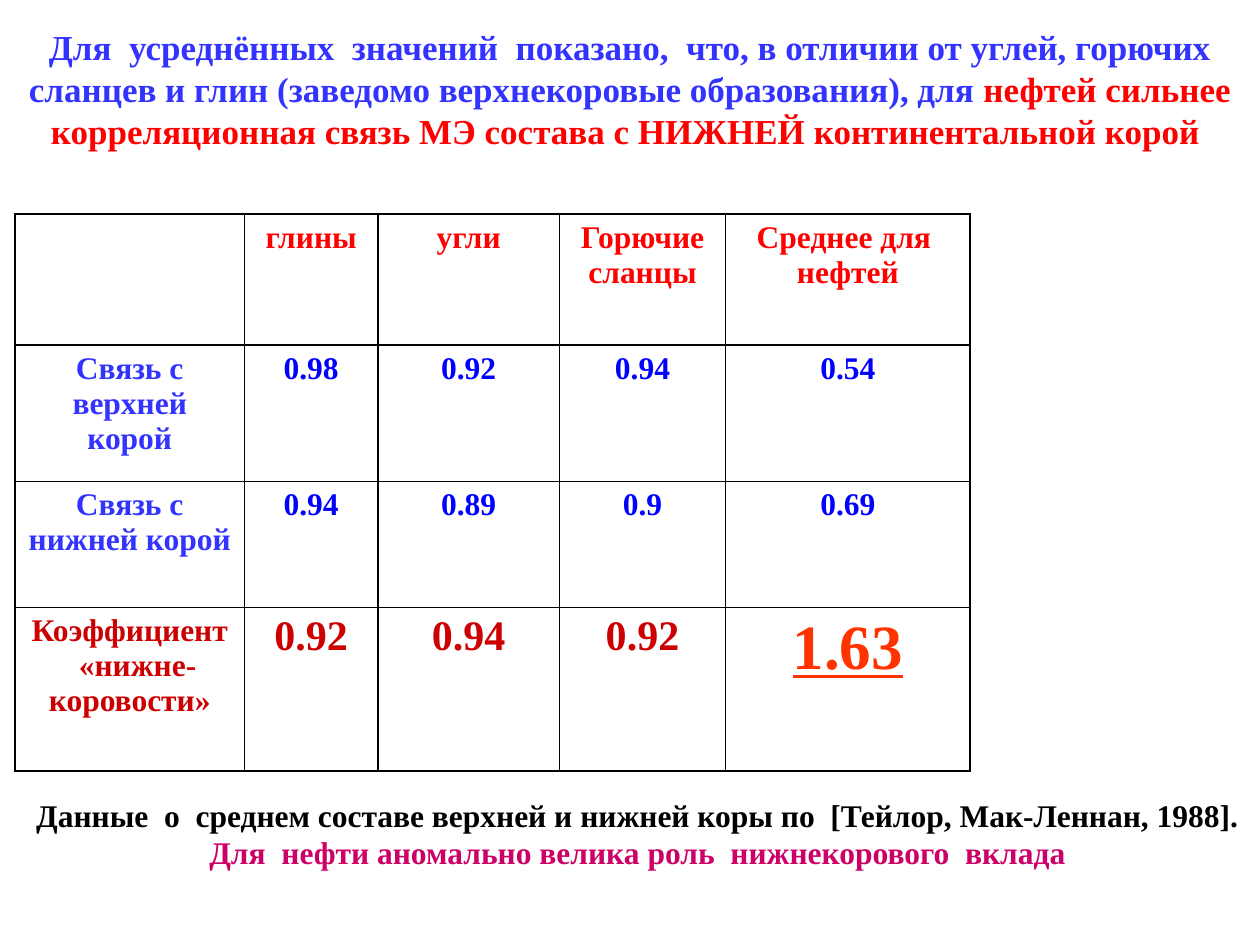
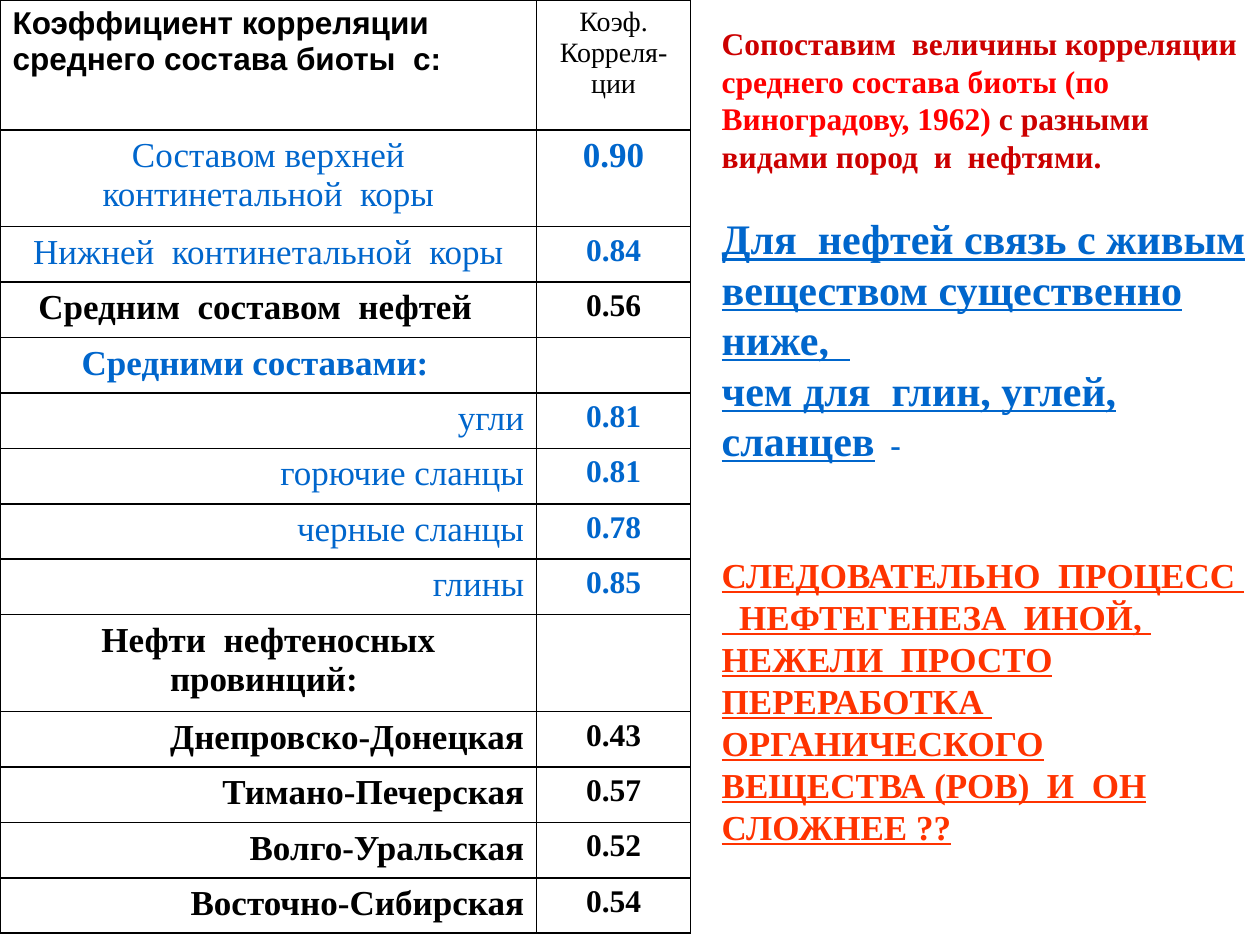
from dataclasses import dataclass, replace

from lxml.etree import SubElement
from pptx import Presentation
from pptx.dml.color import RGBColor
from pptx.enum.text import MSO_ANCHOR as Anchor, MSO_AUTO_SIZE as AutoSize, PP_ALIGN as Align
from pptx.oxml.ns import qn
from pptx.util import Inches, Pt


@dataclass(frozen=True)
class Theme:
    """Colours, fonts and type sizes shared by the slides."""
    black: str = "000000"
    white: str = "FFFFFF"
    red: str = "FF0000"
    dark_red: str = "CC0000"
    orange: str = "FF3300"
    magenta: str = "CC0066"
    blue: str = "0000FF"
    violet: str = "3333FF"
    sky: str = "0066CC"
    serif: str = "Times New Roman"
    sans: str = "Arial"
    small: int = 16
    body: int = 18
    title: int = 20
    large: int = 24
    huge: int = 36
    border: int = 1
    line_spacing: float = 1.0


THEME = Theme()


@dataclass(frozen=True)
class Style:
    """Look of a run of text."""
    color: str = THEME.black
    size: int = THEME.body
    bold: bool = True
    underline: bool = False
    font: str = THEME.serif


def write_paragraph(paragraph, pieces, align):
    """Fill a paragraph with (text, style) pieces."""
    paragraph.alignment = align
    for text, style in pieces:
        run = paragraph.add_run()
        run.text = text
        font = run.font
        font.name, font.size = style.font, Pt(style.size)
        font.bold, font.underline = style.bold, style.underline
        font.color.rgb = RGBColor.from_string(style.color)


def add_text(slide, box, paragraphs, align, anchor=Anchor.MIDDLE):
    """Add a text box of (space before, pieces) paragraphs."""
    text_frame = slide.shapes.add_textbox(*map(Inches, box)).text_frame
    text_frame.word_wrap = True
    text_frame.auto_size = AutoSize.SHAPE_TO_FIT_TEXT
    text_frame.vertical_anchor = anchor
    for index, (space, pieces) in enumerate(paragraphs):
        paragraph = text_frame.add_paragraph() if index else text_frame.paragraphs[0]
        paragraph.space_before = Pt(space)
        paragraph.line_spacing = THEME.line_spacing
        write_paragraph(paragraph, pieces, align)


def draw_borders(cell):
    """Draw a thin black line on each side of a cell."""
    properties = cell._tc.get_or_add_tcPr()
    for index, side in enumerate(("lnL", "lnR", "lnT", "lnB")):
        line = properties.makeelement(qn(f"a:{side}"), {"w": str(Pt(THEME.border))})
        fill = SubElement(line, qn("a:solidFill"))
        SubElement(fill, qn("a:srgbClr"), val=THEME.black)
        properties.insert(index, line)


def add_grid(slide, left, top, widths, heights, rows):
    """Add a bordered table whose cells are (text, style, alignment) or None."""
    table = slide.shapes.add_table(
        len(heights), len(widths), Inches(left), Inches(top),
        Inches(sum(widths)), Inches(sum(heights))).table
    table.first_row = table.horz_banding = False
    for column, width in zip(table.columns, widths):
        column.width = Inches(width)
    for row, height, contents in zip(table.rows, heights, rows):
        row.height = Inches(height)
        for cell, content in zip(row.cells, contents):
            cell.fill.background()
            draw_borders(cell)
            if content:
                text, style, align = content
                write_paragraph(cell.text_frame.paragraphs[0], [(text, style)], align)


def add_crust_table(slide, left, top):
    """Add the table of links with the upper and lower crust."""
    red, violet, blue = Style(THEME.red), Style(THEME.violet), Style(THEME.blue)
    dark = Style(THEME.dark_red)
    ratio = replace(dark, size=THEME.large)
    oil_ratio = Style(THEME.orange, THEME.huge, underline=True)
    header = ["глины", "угли", "Горючие сланцы", "Среднее для  нефтей"]
    links = [
        ("Связь с верхней корой", ["0.98", "0.92", "0.94", "0.54"]),
        ("Связь с нижней корой", ["0.94", "0.89", "0.9", "0.69"]),
    ]
    rows = [[None] + [(text, red, Align.CENTER) for text in header]]
    for label, values in links:
        rows.append([(label, violet, Align.CENTER)]
                    + [(value, blue, Align.CENTER) for value in values])
    rows.append([("Коэффициент   «нижне-коровости»", dark, Align.CENTER)]
                + [(value, ratio, Align.CENTER) for value in ("0.92", "0.94", "0.92")]
                + [("1.63", oil_ratio, Align.CENTER)])
    add_grid(slide, left, top, [1.82, 1.06, 1.44, 1.32, 1.94], [1.04, 1.08, 1, 1.3], rows)


def add_biota_table(slide, left, top):
    """Add the table of correlations with the average biota."""
    sky = Style(THEME.sky, THEME.title, bold=False)
    sky_bold = replace(sky, bold=True)
    black = Style(size=THEME.title)
    entries = [
        (" Составом верхней  континетальной  коры", sky, Align.CENTER, "0.90"),
        ("Нижней  континетальной  коры", sky, Align.CENTER, "0.84"),
        ("Средним  составом  нефтей   ", black, Align.CENTER, "0.56"),
        ("Средними составами:   ", sky_bold, Align.CENTER, None),
        ("угли", sky, Align.RIGHT, "0.81"),
        ("горючие сланцы", sky, Align.RIGHT, "0.81"),
        ("черные сланцы", sky, Align.RIGHT, "0.78"),
        ("глины", sky, Align.RIGHT, "0.85"),
        ("Нефти  нефтеносных провинций: ", black, Align.CENTER, None),
        ("Днепровско-Донецкая", black, Align.RIGHT, "0.43"),
        ("Тимано-Печерская", black, Align.RIGHT, "0.57"),
        ("Волго-Уральская", black, Align.RIGHT, "0.52"),
        ("Восточно-Сибирская", black, Align.RIGHT, "0.54"),
    ]
    rows = [[
        ("Коэффициент корреляции среднего состава биоты  с:", Style(font=THEME.sans), Align.LEFT),
        ("Коэф. Корреля-ции", Style(size=THEME.small, bold=False), Align.CENTER),
    ]]
    for index, (label, style, align, value) in enumerate(entries):
        value_style = Style(style.color, THEME.body if index else THEME.title)
        rows.append([(label, style, align),
                     (value, value_style, Align.CENTER) if value else None])
    single, double = 0.44, 0.77
    heights = [1.03, double] + [single] * 7 + [double] + [single] * 4
    add_grid(slide, left, top, [4.26, 1.22], heights, rows)


def add_blank_slide(presentation):
    """Add an empty slide with the shared background."""
    slide = presentation.slides.add_slide(presentation.slide_layouts[6])
    slide.background.fill.solid()
    slide.background.fill.fore_color.rgb = RGBColor.from_string(THEME.white)
    return slide


def build_crust_slide(presentation):
    """Build the slide comparing links with the two crusts."""
    slide = add_blank_slide(presentation)
    heading = [
        ("Для  усреднённых  значений  показано,  что, в отличии от углей, горючих сланцев "
         "и глин (заведомо верхнекоровые образования), для ", Style(THEME.violet, THEME.title)),
        ("нефтей сильнее корреляционная связь МЭ состава с НИЖНЕЙ континентальной корой ",
         Style(THEME.red, THEME.title)),
    ]
    add_text(slide, (0, 0.15, 10, 1.1), [(0, heading)], Align.CENTER)
    source = ("Данные  о  среднем составе верхней и нижней коры по  "
              "[Тейлор, Мак-Леннан, 1988].", Style())
    finding = ("Для  нефти аномально велика роль  нижнекорового  вклада", Style(THEME.magenta))
    add_text(slide, (0.12, 6.26, 9.88, 0.71), [(0, [source]), (0, [finding])], Align.CENTER)
    add_crust_table(slide, 0.12, 1.7)


def build_biota_slide(presentation):
    """Build the slide comparing rocks and oils with living matter."""
    slide = add_blank_slide(presentation)
    dark = Style(THEME.dark_red)
    claim = Style(THEME.sky, THEME.large, underline=True)
    conclusion = Style(THEME.orange, THEME.title, underline=True)
    paragraphs = [
        (0, [("Сопоставим  величины корреляции ", dark),
             ("среднего состава биоты (по Виноградову, 1962) ", Style(THEME.red)),
             ("с разными видами пород  и  нефтями.", dark)]),
        (21.6, [("Для  нефтей связь с живым веществом существенно ниже,  ", claim)]),
        (0, [("чем для  глин, углей, сланцев", claim), ("  -", Style(THEME.sky))]),
        (50.4, [("СЛЕДОВАТЕЛЬНО  ПРОЦЕСС    НЕФТЕГЕНЕЗА  ИНОЙ,  НЕЖЕЛИ  ПРОСТО "
                 "ПЕРЕРАБОТКА  ОРГАНИЧЕСКОГО ВЕЩЕСТВА (РОВ)  И  ОН СЛОЖНЕЕ ??", conclusion)]),
    ]
    add_text(slide, (5.63, 0.14, 4.37, 6.63), paragraphs, Align.LEFT, Anchor.TOP)
    add_biota_table(slide, 0, 0)


def main():
    """Build and save the presentation."""
    presentation = Presentation()
    presentation.slide_width, presentation.slide_height = Inches(10), Inches(7.5)
    build_crust_slide(presentation)
    build_biota_slide(presentation)
    presentation.save("out.pptx")


if __name__ == "__main__":
    main()
